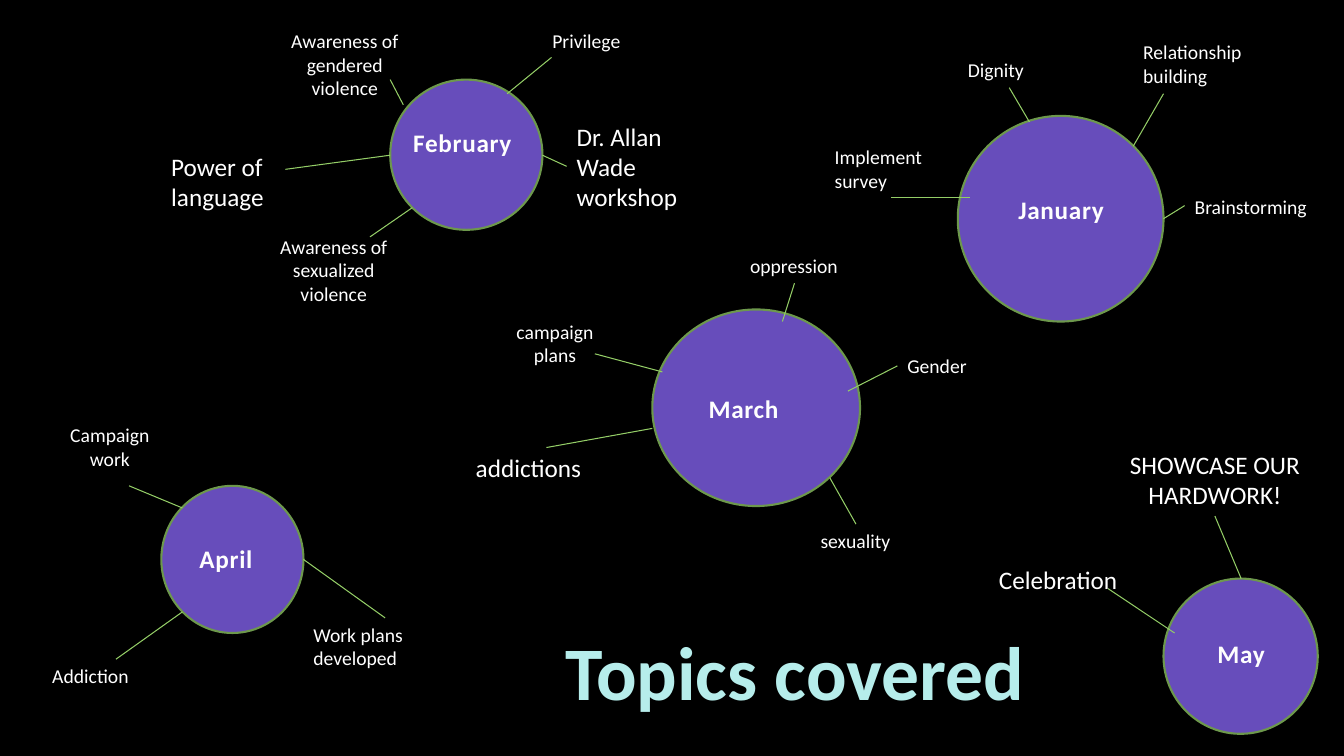
from lxml import etree
from pptx import Presentation
from pptx import util as u
from pptx.dml.color import RGBColor
from pptx.enum import shapes, text
from pptx.oxml import parse_xml
from pptx.oxml.ns import nsdecls, qn

LEFT, CENTER = text.PP_ALIGN.LEFT, text.PP_ALIGN.CENTER
FONT = "Calibri"
LIME = "94CE67"

MONTHS = [
    ("January", (9.5, 1.15, 2.04, 2.04), (0.31, 0.73, 1.43, CENTER), [
        ("Relationship building", (1.74, -0.8, 1.5), 2, 14, LEFT, (1.74, 0.3, 2.04, -0.22)),
        ("Dignity", (0, -0.62, 1.02), 1, 14, LEFT, (0.51, -0.28, 0.71, 0.06)),
        ("Brainstorming", (2.25, 0.73, 1.58), 1, 14, LEFT, (2.04, 1.02, 2.25, 0.89)),
        ("Implement survey", (-1.32, 0.24, 1.32), 2, 14, LEFT, (-0.66, 0.81, 0.12, 0.81)),
    ]),
    ("February", (3.87, 0.79, 1.51, 1.49), (0.13, 0.42, 1.38, LEFT), [
        ("Awareness of gendered violence", (-1.25, -0.55, 1.6), 3, 14, CENTER, (0.13, 0.25, 0, 0)),
        ("Awareness of sexualized violence", (-1.25, 1.49, 1.38), 3, 14, CENTER,
         (0.22, 1.27, -0.2, 1.56)),
        ("Privilege", (1.51, -0.55, 1.37), 1, 14, LEFT, (1.16, 0.14, 1.6, -0.22)),
        ("Dr. Allan Wade workshop", (1.75, 0.36, 1.44), 3, 18, LEFT, (1.51, 0.75, 1.75, 0.86)),
        ("Power of language", (-2.27, 0.66, 1.57), 2, 18, LEFT, (0, 0.75, -1.04, 0.89)),
    ]),
    ("March", (6.47, 3.07, 2.06, 1.95), (0.46, 0.78, 1.13, LEFT), [
        ("campaign plans", (-1.58, 0.05, 1.23), 2, 14, CENTER, (-0.57, 0.44, 0.1, 0.62)),
        ("Gender", (2.43, 0.39, 1.58), 1, 14, LEFT, (1.94, 0.81, 2.43, 0.56)),
        ("addictions", (-1.85, 1.37, 1.59), 1, 18, LEFT, (0, 1.18, -1.05, 1.37)),
        ("sexuality", (1.57, 2.13, 0.95), 1, 14, LEFT, (1.76, 1.67, 2.02, 2.13)),
        ("oppression", (0.87, -0.6, 1.15), 1, 14, LEFT, (1.41, -0.26, 1.29, 0.12)),
    ]),
    ("April", (1.6, 4.82, 1.41, 1.46), (0.28, 0.52, 0.88, LEFT), [
        ("Campaign work", (-1.18, -0.67, 1.34), 2, 14, CENTER, (-0.32, 0, 0.21, 0.22)),
        ("Work plans developed", (1.41, 1.31, 1.62), 2, 14, LEFT, (1.41, 0.73, 2.22, 1.31)),
        ("Addiction", (-1.18, 1.72, 1.47), 1, 14, LEFT, (0.21, 1.25, -0.45, 1.72)),
    ]),
    ("May", (11.54, 5.74, 1.53, 1.54), (0.21, 0.54, 1.12, CENTER), [
        ("SHOWCASE OUR HARDWORK!", (-0.51, -1.33, 2.04), 2, 18, CENTER, (0.51, -0.62, 0.77, 0)),
        ("Celebration", (-1.73, -0.19, 1.57), 1, 18, LEFT, (-0.55, 0.1, 0.11, 0.54)),
    ]),
]


def rgb(hex_color):
    return RGBColor.from_string(hex_color)


def add_label(slide, wording, x, y, width, lines, size, align, color="FFFFFF", bold=False):
    height = 0.1 + lines * size * 1.2 / 72
    label = slide.shapes.add_textbox(*map(u.Inches, (x, y, width, height)))
    frame = label.text_frame
    frame.word_wrap = True
    frame.auto_size = text.MSO_AUTO_SIZE.SHAPE_TO_FIT_TEXT
    paragraph = frame.paragraphs[0]
    paragraph.alignment = align
    run = paragraph.add_run()
    run.text = wording
    paragraph.font.name = FONT
    paragraph.font.size = u.Pt(size)
    paragraph.font.bold = bold
    paragraph.font.color.rgb = rgb(color)
    run.font.name = FONT
    run.font.size = u.Pt(size)
    run.font.bold = bold
    run.font.color.rgb = rgb(color)
    return run


def outline_text(run, color, width):
    properties = run.font._element
    properties.insert(0, parse_xml(
        f'<a:ln {nsdecls("a")} w="{u.Pt(width)}"><a:solidFill>'
        f'<a:srgbClr val="{color}"/></a:solidFill></a:ln>'))


def shade_text(run):
    properties = run.font._element
    properties.set("spc", "50")
    properties.find(qn("a:solidFill")).addnext(parse_xml(
        f'<a:effectLst {nsdecls("a")}><a:outerShdw blurRad="38100" dist="38100" dir="2700000">'
        '<a:srgbClr val="000000"><a:alpha val="50000"/></a:srgbClr>'
        '</a:outerShdw></a:effectLst>'))


def add_spoke(slide, x1, y1, x2, y2):
    spoke = slide.shapes.add_connector(
        shapes.MSO_CONNECTOR.STRAIGHT, *map(u.Inches, (x1, y1, x2, y2)))
    spoke.line.color.rgb = rgb(LIME)
    spoke.line.width = u.Pt(0.75)
    etree.SubElement(spoke._element.spPr, qn("a:effectLst"))


def add_month(slide, month, box, name_place, topics):
    left, top = box[:2]
    circle = slide.shapes.add_shape(shapes.MSO_SHAPE.OVAL, *map(u.Inches, box))
    circle.shadow.inherit = False
    circle.fill.solid()
    circle.fill.fore_color.rgb = rgb("674DBB")
    circle.line.color.rgb = rgb("6D984C")
    circle.line.width = u.Pt(1.5)

    dx, dy, width, align = name_place
    name = add_label(slide, month, left + dx, top + dy, width, 1, 18, align, "FEFEFE", True)
    outline_text(name, LIME, 0.75)
    shade_text(name)

    for topic, (dx, dy, width), lines, size, align, (x1, y1, x2, y2) in topics:
        add_label(slide, topic, left + dx, top + dy, width, lines, size, align)
        add_spoke(slide, left + x1, top + y1, left + x2, top + y2)


def add_title(slide, x, y, width):
    title = add_label(slide, "Topics covered", x, y, width, 1, 54, CENTER, "B6EDEB", True)
    outline_text(title, "49D1CD", 1.75)


def main():
    deck = Presentation()
    deck.slide_width, deck.slide_height = u.Inches(13.33), u.Inches(7.5)
    slide = deck.slides.add_slide(deck.slide_layouts[6])
    slide.background.fill.solid()
    slide.background.fill.fore_color.rgb = rgb("000000")
    for month in MONTHS:
        add_month(slide, *month)
    add_title(slide, 4.97, 6.15, 5.83)
    deck.save("out.pptx")


if __name__ == "__main__":
    main()
